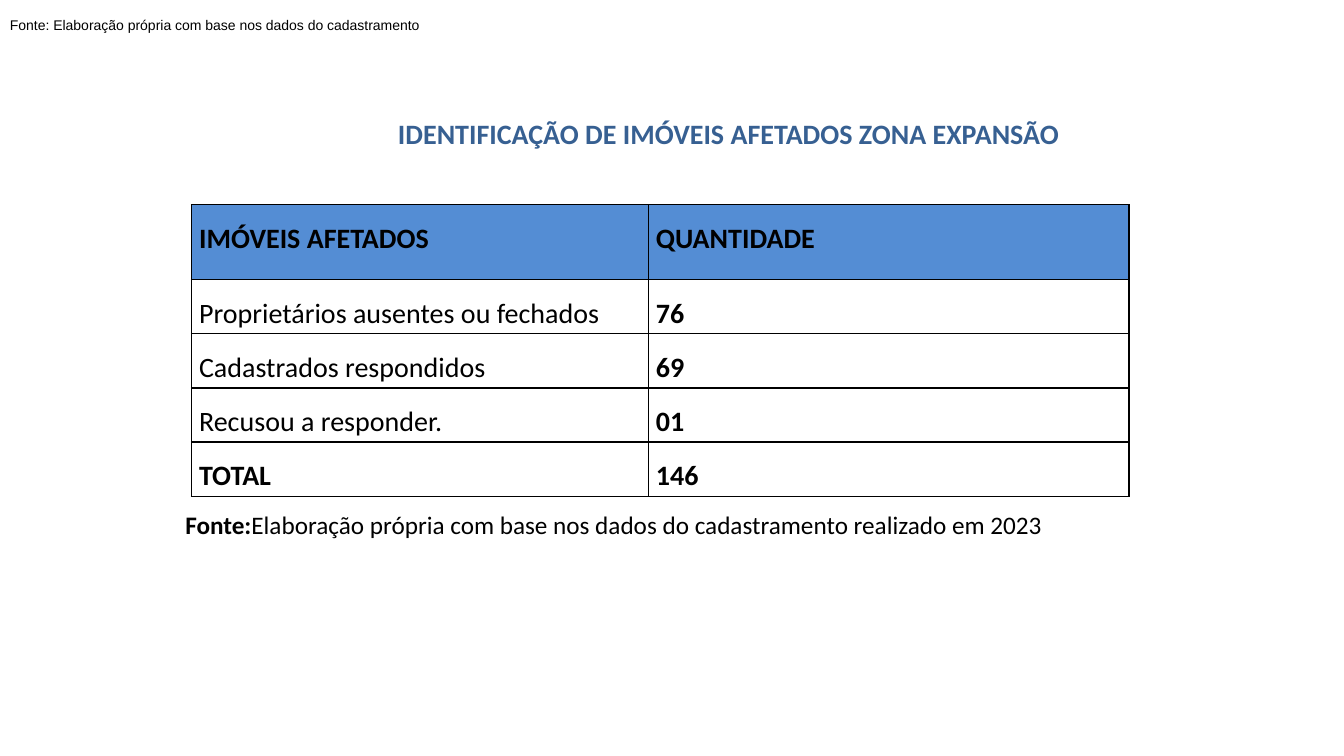
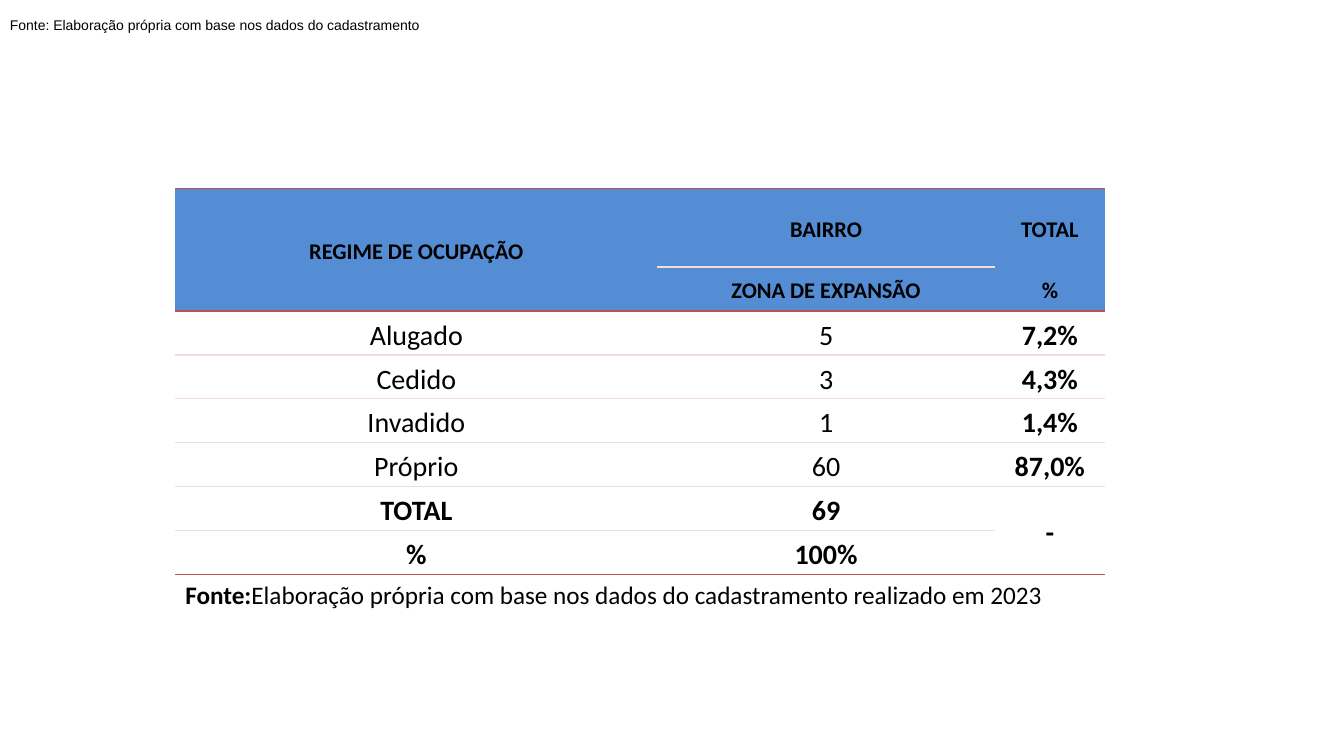
from dataclasses import dataclass

from lxml import etree
from pptx import Presentation
from pptx.dml.color import RGBColor
from pptx.enum.text import MSO_ANCHOR, MSO_AUTO_SIZE, PP_ALIGN
from pptx.oxml.ns import qn
from pptx.util import Pt

TOP, MIDDLE = MSO_ANCHOR.TOP, MSO_ANCHOR.MIDDLE
LEFT, CENTER = PP_ALIGN.LEFT, PP_ALIGN.CENTER
GROW = MSO_AUTO_SIZE.SHAPE_TO_FIT_TEXT
BLANK_LAYOUT = 6


@dataclass(frozen=True)
class Theme:
    font: str = "Calibri"
    banner_font: str = "Arial"
    text: str = "000000"
    title: str = "376092"
    header_fill: str = "548DD4"
    body_fill: str = "FFFFFF"
    strong_line: str = "C0504D"
    soft_line: str = "F2DDDC"
    title_size: int = 20
    body_size: int = 20
    small_header_size: int = 16
    source_size: int = 18
    banner_size: int = 10
    line_width: int = 1


THEME = Theme()
SLIDE_WIDTH, SLIDE_HEIGHT = 960, 540

PROPERTY_ROWS = [
    ["IMÓVEIS AFETADOS", "QUANTIDADE"],
    ["Proprietários ausentes ou fechados", "76"],
    ["Cadastrados respondidos", "69"],
    ["Recusou a responder.", "01"],
    ["TOTAL", "146"],
]
OCCUPANCY_ROWS = [
    ["REGIME DE OCUPAÇÃO", "BAIRRO", "TOTAL"],
    ["", "ZONA DE EXPANSÃO", "%"],
    ["Alugado", "5", "7,2%"],
    ["Cedido", "3", "4,3%"],
    ["Invadido", "1", "1,4%"],
    ["Próprio", "60", "87,0%"],
    ["TOTAL", "69", "-"],
    ["%", "100%", ""],
]


def apply_format(target, values):
    for name, value in values.items():
        setattr(target, name, value)


def add_run(paragraph, text, size, bold=False, color=THEME.text, font=THEME.font):
    run = paragraph.add_run()
    run.text = text
    apply_format(run.font, {"name": font, "size": Pt(size), "bold": bold})
    run.font.color.rgb = RGBColor.from_string(color)


def add_text(slide, box, runs, anchor=TOP):
    """Place one paragraph in box; each run is a dict for add_run."""
    frame = slide.shapes.add_textbox(*map(Pt, box)).text_frame
    apply_format(frame, {"word_wrap": True, "auto_size": GROW, "vertical_anchor": anchor})
    for run in runs:
        add_run(frame.paragraphs[0], **run)


def add_banner(slide):
    add_text(slide, (0, 0, SLIDE_WIDTH, 36), [{
        "text": "Fonte: Elaboração própria com base nos dados do cadastramento",
        "size": THEME.banner_size, "font": THEME.banner_font}], MIDDLE)


def add_source(slide, left, top):
    add_text(slide, (left, top, 700, 29), [
        {"text": "Fonte:", "size": THEME.source_size, "bold": True},
        {"text": "Elaboração própria com base nos dados do cadastramento realizado em 2023",
         "size": THEME.source_size}])


def set_borders(cell, colors):
    """Draw left, right, top and bottom edges; None leaves an edge open."""
    properties = cell._tc.get_or_add_tcPr()
    for side, color in zip("LRTB", colors):
        line = etree.SubElement(properties, qn(f"a:ln{side}"), w=str(Pt(THEME.line_width)))
        if color:
            fill = etree.SubElement(line, qn("a:solidFill"))
            etree.SubElement(fill, qn("a:srgbClr"), val=color)
        else:
            etree.SubElement(line, qn("a:noFill"))


def add_data_table(slide, position, rows, widths, heights, cell_format, alignment,
                   line_spacing, header_size, borders, header_rows=1, total_rows=1, merges=()):
    """Header rows, total rows and the last column are bold."""
    box = (*position, sum(widths), sum(heights))
    table = slide.shapes.add_table(len(rows), len(widths), *map(Pt, box)).table
    apply_format(table, {"first_row": False, "horz_banding": False})
    for column, width in zip(table.columns, widths):
        column.width = Pt(width)
    for row, height in zip(table.rows, heights):
        row.height = Pt(height)
    for first, last in merges:
        table.cell(*first).merge(table.cell(*last))

    # Cells
    for row_index, values in enumerate(rows):
        is_header = row_index < header_rows
        is_total = row_index >= len(rows) - total_rows
        for column_index, value in enumerate(values):
            cell = table.cell(row_index, column_index)
            apply_format(cell, cell_format)
            set_borders(cell, borders(row_index, row_index + cell.span_height, column_index))
            cell.fill.solid()
            cell.fill.fore_color.rgb = RGBColor.from_string(
                THEME.header_fill if is_header else THEME.body_fill)
            if value:
                paragraph = cell.text_frame.paragraphs[0]
                apply_format(paragraph, {"alignment": alignment, "line_spacing": line_spacing})
                add_run(paragraph, value, header_size if is_header else THEME.body_size,
                        is_header or is_total or column_index == len(values) - 1)


def cell_layout(side_margin, anchor):
    return {"margin_left": Pt(side_margin), "margin_right": Pt(side_margin),
            "margin_top": 0, "margin_bottom": 0, "vertical_anchor": anchor}


def grid_borders(top, bottom, column):
    return [THEME.text] * 4


def occupancy_borders(top, bottom, column):
    """Horizontal rules only, strong around the header and at the foot."""
    open_edges = {(1, 0), (1, 2), (7, 2)}

    def rule(edge):
        if (edge, column) in open_edges:
            return None
        return THEME.strong_line if edge in (0, 2, len(OCCUPANCY_ROWS)) else THEME.soft_line

    return [None, None, rule(top), rule(bottom)]


def build_property_slide(slide):
    left, top = 136.8, 146.2
    heights = [53.5] + [38.7] * 4
    add_data_table(slide, (left, top), PROPERTY_ROWS, [326.4, 343.2], heights,
                   cell_layout(5.4, TOP), LEFT, 1.5, THEME.body_size, grid_borders)
    add_text(slide, (left + 140.4, top - 66.2, 495.4, 31.5), [{
        "text": "IDENTIFICAÇÃO DE IMÓVEIS AFETADOS ZONA EXPANSÃO",
        "size": THEME.title_size, "bold": True, "color": THEME.title}])
    add_banner(slide)
    add_source(slide, left - 11.5, top + sum(heights) + 5.5)


def build_occupancy_slide(slide):
    left, top = 125.3, 134.6
    heights = [56.2] + [31.4] * 7
    add_data_table(slide, (left, top), OCCUPANCY_ROWS, [344.2, 241.2, 78.5], heights,
                   cell_layout(3.5, MIDDLE), CENTER, 1.15, THEME.small_header_size,
                   occupancy_borders, header_rows=2, total_rows=2,
                   merges=[((0, 0), (1, 0)), ((6, 2), (7, 2))])
    add_banner(slide)
    add_source(slide, left, top + sum(heights))


def main():
    presentation = Presentation()
    apply_format(presentation, {"slide_width": Pt(SLIDE_WIDTH), "slide_height": Pt(SLIDE_HEIGHT)})
    for build in (build_property_slide, build_occupancy_slide):
        build(presentation.slides.add_slide(presentation.slide_layouts[BLANK_LAYOUT]))
    presentation.save("out.pptx")


if __name__ == "__main__":
    main()
